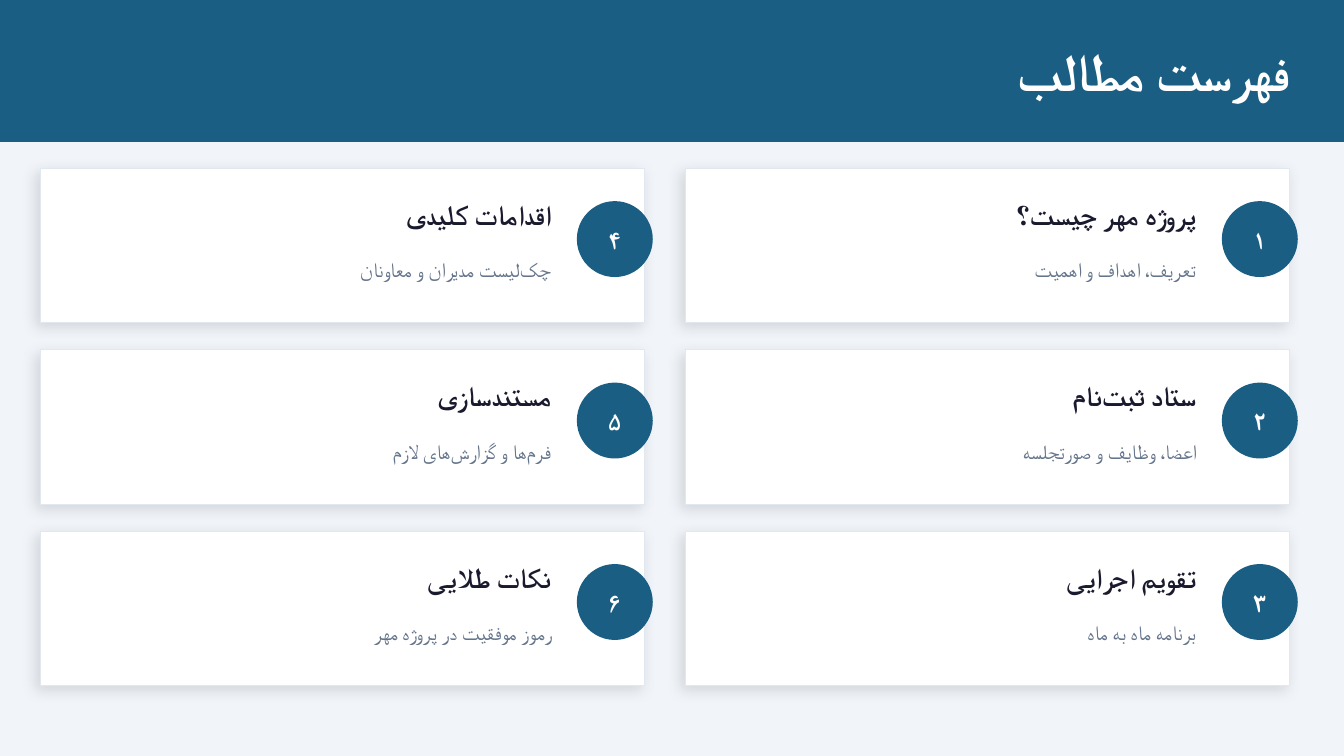
from lxml import etree
from pptx import Presentation
from pptx.dml.color import RGBColor
from pptx.enum.shapes import MSO_SHAPE
from pptx.enum.text import MSO_ANCHOR, MSO_AUTO_SIZE, PP_ALIGN
from pptx.oxml import parse_xml
from pptx.oxml.ns import nsdecls, qn
from pptx.util import Cm, Pt

RECTANGLE, OVAL = MSO_SHAPE.RECTANGLE, MSO_SHAPE.OVAL
MIDDLE = MSO_ANCHOR.MIDDLE
NO_AUTOFIT = MSO_AUTO_SIZE.NONE
RIGHT, CENTER = PP_ALIGN.RIGHT, PP_ALIGN.CENTER

BLUE = RGBColor(0x1B, 0x5E, 0x83)
WHITE = RGBColor(0xFF, 0xFF, 0xFF)
PALE = RGBColor(0xF1, 0xF5, 0xF9)
BORDER = RGBColor(0xE2, 0xE8, 0xF0)
INK = RGBColor(0x1A, 0x1A, 0x2E)
GREY = RGBColor(0x64, 0x74, 0x8B)
FONT = "Calibri"

CARD_SHADOW = (
    f'<a:effectLst {nsdecls("a")}>'
    f'<a:outerShdw blurRad="{Pt(8)}" dist="{Pt(3)}" dir="{135 * 60000}" '
    'algn="bl" rotWithShape="0">'
    '<a:srgbClr val="000000"><a:alpha val="12000"/></a:srgbClr>'
    '</a:outerShdw></a:effectLst>'
)

# Zero-width non-joiner, the Persian half-space
HALF_SPACE = chr(0x200C)

# Each section: title, description; numbered down the right column first
SECTIONS = [
    ("پروژه مهر چیست؟", "تعریف، اهداف و اهمیت"),
    (f"ستاد ثبت{HALF_SPACE}نام", "اعضا، وظایف و صورتجلسه"),
    ("تقویم اجرایی", "برنامه ماه به ماه"),
    ("اقدامات کلیدی", f"چک{HALF_SPACE}لیست مدیران و معاونان"),
    ("مستندسازی", f"فرم{HALF_SPACE}ها و گزارش{HALF_SPACE}های لازم"),
    ("نکات طلایی", "رموز موفقیت در پروژه مهر"),
]
NUMERALS = "۱۲۳۴۵۶"
ROWS = 3


def write_text(shape, text, size, color, bold=True, align=RIGHT, margin=None):
    frame = shape.text_frame
    frame.word_wrap = True
    frame.auto_size = NO_AUTOFIT
    frame.vertical_anchor = MIDDLE
    if margin is not None:
        frame.margin_left = frame.margin_right = margin
        frame.margin_top = frame.margin_bottom = margin
    paragraph = frame.paragraphs[0]
    paragraph.alignment = align
    if align == RIGHT:
        paragraph._p.get_or_add_pPr().set("rtl", "1")
    run = paragraph.add_run()
    run.text = text
    run.font.name = FONT
    run.font.size = Pt(size)
    run.font.bold = bold
    run.font.color.rgb = color
    # Persian letters take the complex-script font
    etree.SubElement(run._r.get_or_add_rPr(), qn("a:cs"), typeface=FONT)


def add_filled_shape(kind, left, top, width, height, fill, line, line_width):
    shape = slide.shapes.add_shape(kind, left, top, width, height)
    shape.shadow.inherit = False
    shape.fill.solid()
    shape.fill.fore_color.rgb = fill
    shape.line.color.rgb = line
    shape.line.width = Pt(line_width)
    return shape


presentation = Presentation()
presentation.slide_width = Cm(25.4)
presentation.slide_height = Cm(14.29)
slide = presentation.slides.add_slide(presentation.slide_layouts[5])
slide.background.fill.solid()
slide.background.fill.fore_color.rgb = PALE

# Header band, placed behind the title
header = add_filled_shape(RECTANGLE, 0, 0, Cm(25.4), Cm(2.67), BLUE, BLUE, 1)
slide.shapes.title._element.addprevious(header._element)

# Title
title = slide.shapes.title
title.left, title.top = Cm(0.76), Cm(0.38)
title.width, title.height = Cm(23.88), Cm(1.91)
write_text(title, "فهرست مطالب", 28, WHITE)

# Section cards
for index, (heading, description) in enumerate(SECTIONS):
    column, row = divmod(index, ROWS)
    left = Cm(12.95) - column * Cm(12.19)
    top = Cm(3.18) + row * Cm(3.43)

    card = add_filled_shape(RECTANGLE, left, top, Cm(11.43), Cm(2.92),
                            WHITE, BORDER, 0.5)
    properties = card._element.spPr
    properties.replace(properties.find(qn("a:effectLst")), parse_xml(CARD_SHADOW))

    # Number badge
    badge = add_filled_shape(OVAL, left + Cm(10.16), top + Cm(0.64),
                             Cm(1.4), Cm(1.4), BLUE, BLUE, 1)
    write_text(badge, NUMERALS[index], 14, WHITE, align=CENTER, margin=0)

    # Heading and description
    text_left = left + Cm(0.51)
    heading_box = slide.shapes.add_textbox(text_left, top + Cm(0.3), Cm(9.4), Cm(1.14))
    write_text(heading_box, heading, 15, INK)
    description_box = slide.shapes.add_textbox(text_left, top + Cm(1.47), Cm(9.4), Cm(0.89))
    write_text(description_box, description, 11, GREY, bold=False)

presentation.save("out.pptx")
